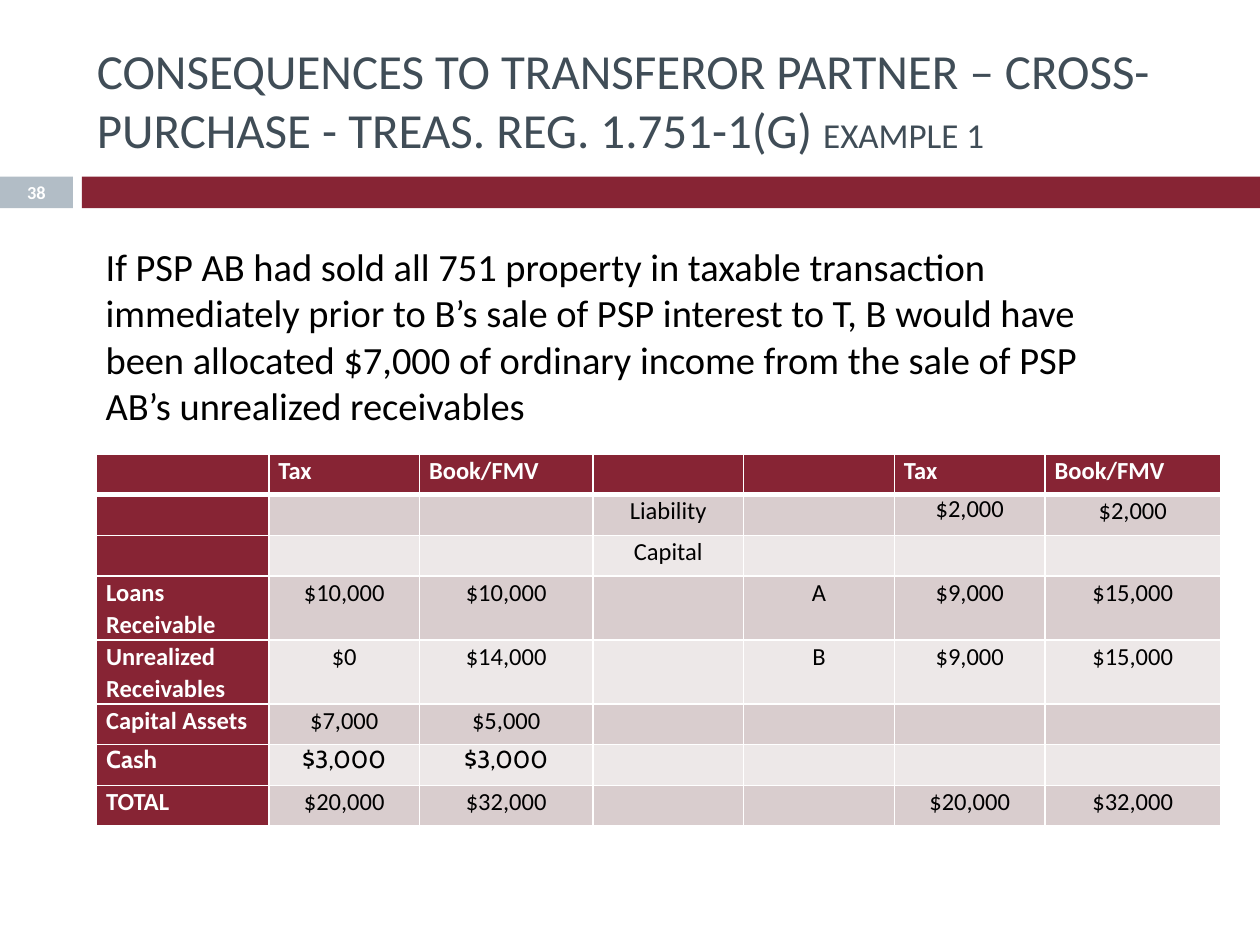
from typing import NamedTuple

from lxml.etree import SubElement
from pptx import Presentation
from pptx.dml.color import RGBColor
from pptx.enum.shapes import MSO_SHAPE as Shape
from pptx.enum.text import MSO_ANCHOR as Anchor, MSO_AUTO_SIZE as AutoSize, PP_ALIGN as Align
from pptx.oxml.ns import qn
from pptx.util import Cm, Pt

MAROON, GREY, SLATE = "872434", "B2BDC6", "404D57"
WHITE, BLACK = "FFFFFF", "000000"
BANDS = ("D9CDCE", "EDE8E8")
FONT, CASH_FONT = "Calibri", "Cabin"


class Box(NamedTuple):
    left: float
    top: float
    width: float
    height: float

    def emu(self) -> list:
        return [Cm(v) for v in self]


class Style(NamedTuple):
    size: float
    color: str
    bold: bool = False
    font: str = FONT


def rgb(value: str) -> RGBColor:
    return RGBColor.from_string(value)


def format_run(r, style: Style) -> None:
    r.font.size = Pt(style.size)
    r.font.name = style.font
    r.font.bold = style.bold
    r.font.color.rgb = rgb(style.color)


def add_bar(slide, box: Box, color: str) -> None:
    sp = slide.shapes.add_shape(Shape.RECTANGLE, *box.emu())
    sp.shadow.inherit = False
    sp.fill.solid()
    sp.fill.fore_color.rgb = rgb(color)
    sp.line.fill.background()


def add_text(slide, box: Box, text: str, style: Style, align=Align.LEFT, anchor=Anchor.TOP) -> None:
    tf = slide.shapes.add_textbox(*box.emu()).text_frame
    tf.word_wrap = True
    tf.vertical_anchor = anchor
    tf.text = text
    p = tf.paragraphs[0]
    p.alignment = align
    format_run(p.runs[0], style)


def set_borders(cell, top: float, bottom: float) -> None:
    tc_pr = cell._tc.get_or_add_tcPr()
    for side, width in (("L", 1), ("R", 1), ("T", top), ("B", bottom)):
        ln = SubElement(tc_pr, qn(f"a:ln{side}"), w=str(Pt(width)))
        SubElement(SubElement(ln, qn("a:solidFill")), qn("a:srgbClr"), val=WHITE)


def fill_cell(cell, text: str, row: int, col: int) -> None:
    heading = row == 0 or col == 0
    set_borders(cell, top=3 if row == 1 else 1, bottom=3 if row == 0 else 1)
    cell.fill.solid()
    cell.fill.fore_color.rgb = rgb(MAROON if heading else BANDS[(row - 1) % 2])
    cell.margin_left = cell.margin_right = Cm(0.19)
    cell.margin_top = cell.margin_bottom = 0
    p = cell.text_frame.paragraphs[0]
    if not text:
        # An empty cell keeps the row height of 14 pt text
        SubElement(p._p, qn("a:endParaRPr"), sz="1400")
        return
    p.text = text
    p.alignment = Align.LEFT if heading else Align.CENTER
    is_cash = row == CASH_ROW
    if not is_cash and (row, col) != TIGHT_CELL:
        p.line_spacing = 1.07
        p.space_after = Pt(8)
    format_run(p.runs[0], Style(14, WHITE if heading else BLACK, heading,
                                CASH_FONT if is_cash else FONT))


def add_balance_sheet(slide, box: Box, widths: list, rows: list) -> None:
    table = slide.shapes.add_table(len(rows), len(widths), *box.emu()).table
    for column, width in zip(table.columns, widths):
        column.width = Cm(width)
    for i, (values, height) in enumerate(zip(rows, ROW_HEIGHTS)):
        table.rows[i].height = Cm(height)
        for j, text in enumerate(values):
            fill_cell(table.cell(i, j), text, i, j)


ROWS = [
    ["", "Tax", "Book/FMV", "", "", "Tax", "Book/FMV"],
    ["", "", "", "Liability", "", "$2,000", "$2,000"],
    ["", "", "", "Capital", "", "", ""],
    ["Loans Receivable", "$10,000", "$10,000", "", "A", "$9,000", "$15,000"],
    ["Unrealized Receivables", "$0", "$14,000", "", "B", "$9,000", "$15,000"],
    ["Capital Assets", "$7,000", "$5,000", "", "", "", ""],
    ["Cash", "$3,000", "$3,000", "", "", "", ""],
    ["TOTAL", "$20,000", "$32,000", "", "", "$20,000", "$32,000"],
]
CASH_ROW = 6
TIGHT_CELL = (1, 5)
# Rows with a two-line heading are taller
ROW_HEIGHTS = [1.29 if "Receivable" in row[0] else 0.82 for row in ROWS]
COLUMN_WIDTHS = [3.47, 3.04, 3.49, 3.04, 3.04, 3.04, 3.53]


def main() -> None:
    prs = Presentation()
    prs.slide_width, prs.slide_height = Cm(25.4), Cm(19.05)
    slide = prs.slides.add_slide(prs.slide_layouts[5])

    # Bars under the title
    add_bar(slide, Box(0, 3.56, 1.47, 0.64), GREY)
    add_bar(slide, Box(1.65, 3.56, 23.75, 0.64), MAROON)

    # Title
    title = slide.shapes.title
    title.left, title.top, title.width, title.height = Box(1.7, 0.64, 22.66, 2.74).emu()
    tf = title.text_frame
    tf.auto_size = AutoSize.NONE
    tf.vertical_anchor = Anchor.MIDDLE
    p = tf.paragraphs[0]
    p.alignment = Align.LEFT
    for text, size in (
        ("CONSEQUENCES TO TRANSFEROR PARTNER – CROSS-PURCHASE - TREAS. REG. 1.751-1(G) ", 28),
        ("EXAMPLE 1", 20),
    ):
        r = p.add_run()
        r.text = text
        format_run(r, Style(size, SLATE))

    # Balance sheet
    box = Box(1.95, 9.15, sum(COLUMN_WIDTHS), sum(ROW_HEIGHTS))
    add_balance_sheet(slide, box, COLUMN_WIDTHS, ROWS)

    # Page number and explanation
    add_text(slide, Box(0, 3.54, 1.47, 0.68), "38", Style(10.5, WHITE, True),
             Align.CENTER, Anchor.MIDDLE)
    add_text(slide, Box(1.88, 4.78, 20.96, 4.01),
             "If PSP AB had sold all 751 property in taxable transaction immediately prior to "
             "B’s sale of PSP interest to T, B would have been allocated $7,000 of ordinary "
             "income from the sale of PSP AB’s unrealized receivables", Style(22, BLACK))

    prs.save("out.pptx")


if __name__ == "__main__":
    main()
